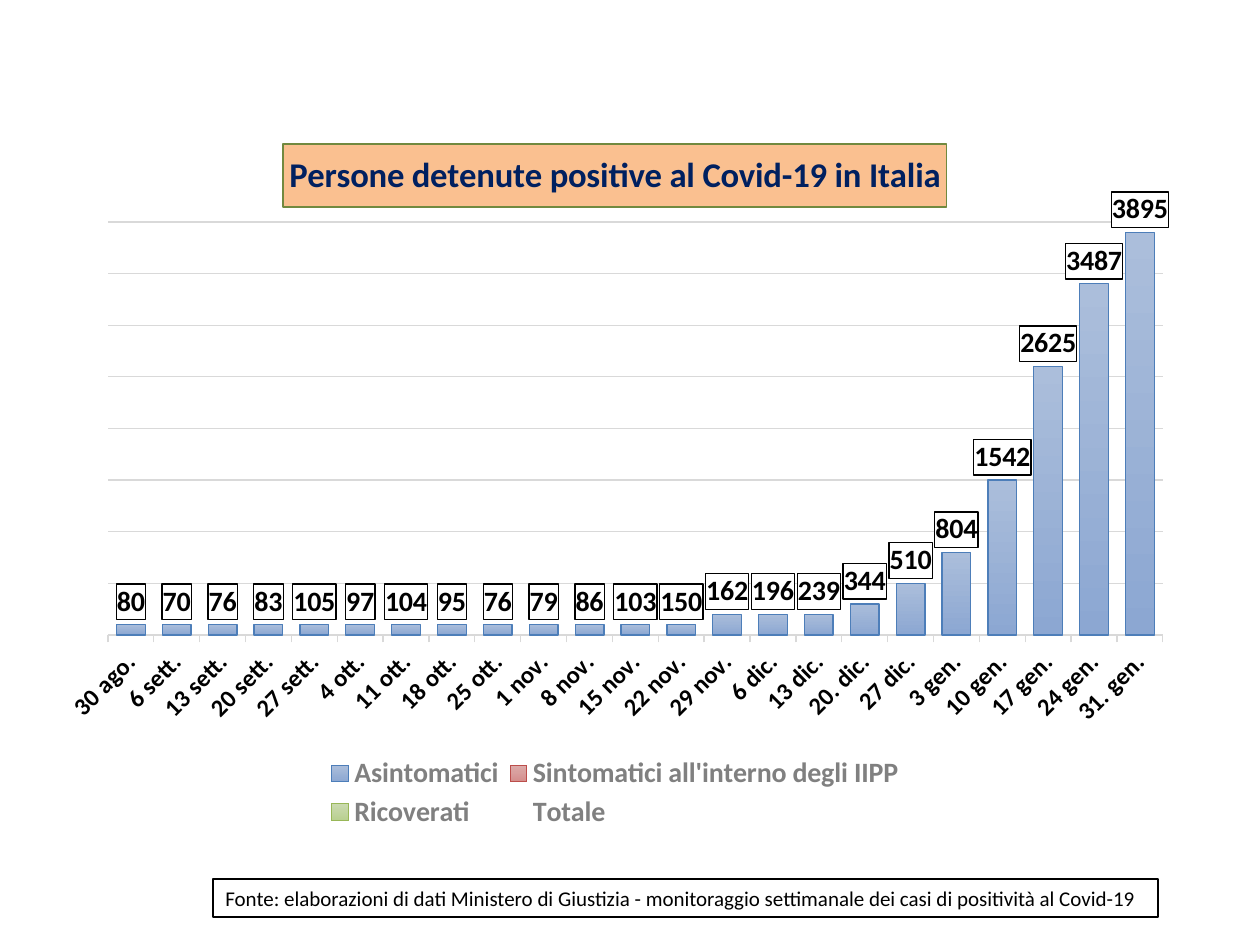
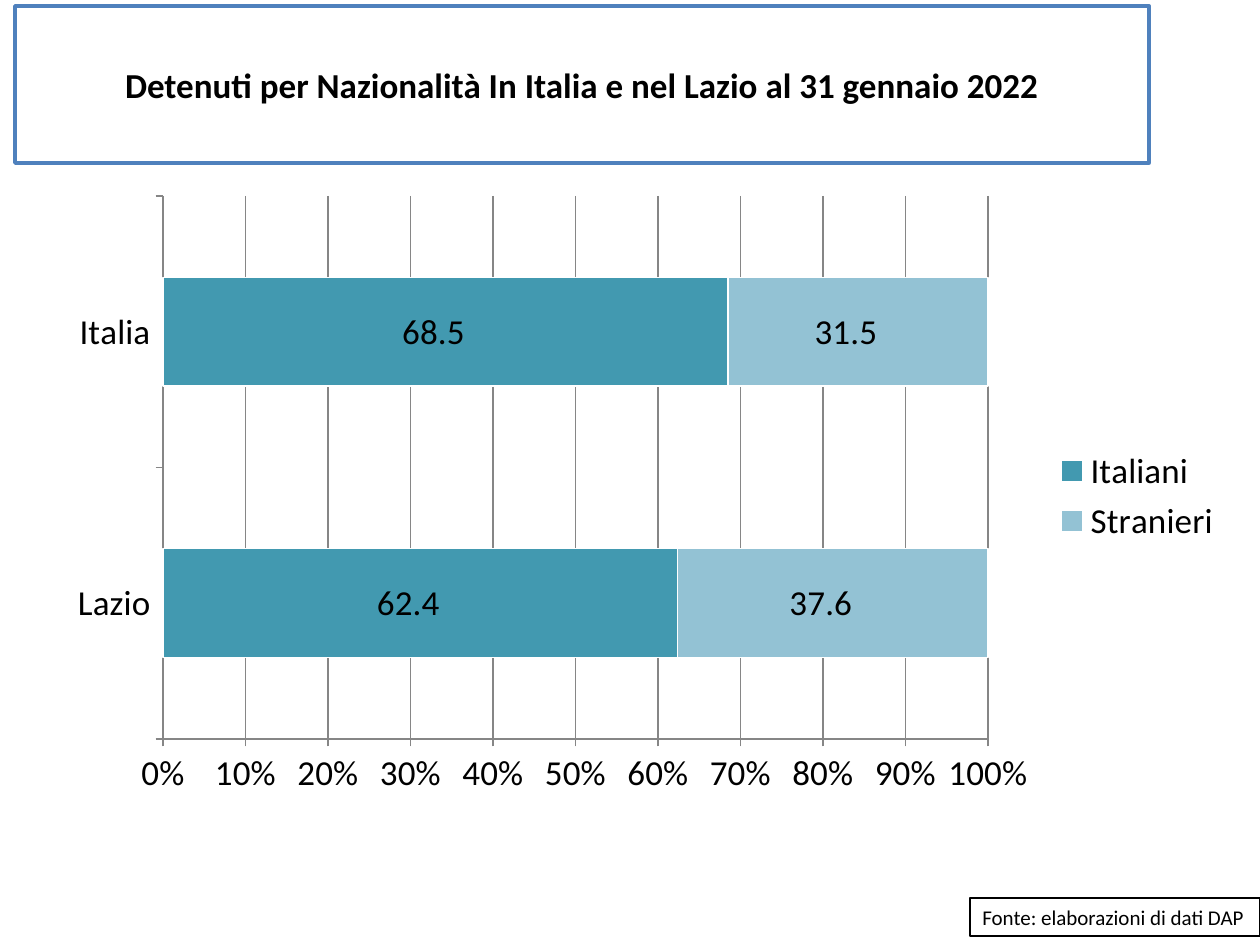
from dataclasses import dataclass
from lxml import etree
from pptx import Presentation
from pptx.chart.data import CategoryChartData
from pptx.dml.color import RGBColor
from pptx.enum.chart import XL_CHART_TYPE, XL_LABEL_POSITION, XL_LEGEND_POSITION, XL_TICK_LABEL_POSITION, XL_TICK_MARK
from pptx.enum.shapes import MSO_SHAPE
from pptx.enum.text import MSO_ANCHOR, PP_ALIGN
from pptx.oxml import parse_xml
from pptx.oxml.ns import nsdecls, qn
from pptx.util import Emu, Pt

COLUMN, BAR = XL_CHART_TYPE.COLUMN_STACKED, XL_CHART_TYPE.BAR_STACKED_100
BOTTOM, RIGHT = XL_LEGEND_POSITION.BOTTOM, XL_LEGEND_POSITION.RIGHT
INSIDE_BASE, CENTER_LABEL = XL_LABEL_POSITION.INSIDE_BASE, XL_LABEL_POSITION.CENTER
NO_LABELS, LOW = XL_TICK_LABEL_POSITION.NONE, XL_TICK_LABEL_POSITION.LOW
NO_TICK, TICK_OUT = XL_TICK_MARK.NONE, XL_TICK_MARK.OUTSIDE
RECT, MIDDLE = MSO_SHAPE.RECTANGLE, MSO_ANCHOR.MIDDLE
LEFT, CENTER = PP_ALIGN.LEFT, PP_ALIGN.CENTER
PX = 914400 / 126


@dataclass
class Theme:
    font: str = "Calibri"
    black: RGBColor = RGBColor(0, 0, 0)
    white: RGBColor = RGBColor(255, 255, 255)
    navy: RGBColor = RGBColor.from_string("002060")
    peach: RGBColor = RGBColor.from_string("FAC090")
    olive: RGBColor = RGBColor.from_string("71893F")
    blue: RGBColor = RGBColor.from_string("4F81BD")
    grey: RGBColor = RGBColor.from_string("808080")
    light_grid: RGBColor = RGBColor.from_string("D9D9D9")
    dark_grid: RGBColor = RGBColor.from_string("868686")
    gradients: tuple = (("ABBEDB", "8CA7D2", "4D7EB9"), ("DDACAB", "D48D8B", "BC4E4B"), ("CADAAF", "B9D091", "98B757"))
    teals: tuple = ("4299B0", "93C2D4")
    title: Pt = Pt(20)
    chart_title: Pt = Pt(19.8)
    label: Pt = Pt(16)
    axis: Pt = Pt(14)
    source: Pt = Pt(12)


def set_font(font, size, color, bold=False):
    font.name, font.size, font.bold = theme.font, size, bold
    font.color.rgb = color


def set_layout(el, frame, box, inner=False):
    for old in el.findall(qn("c:layout")):
        el.remove(old)
    layout = etree.Element(qn("c:layout"))
    manual = etree.SubElement(layout, qn("c:manualLayout"))
    fx, fy, fw, fh = frame
    values = [("xMode", "edge"), ("yMode", "edge"), ("x", round((box[0] - fx) / fw, 4)),
              ("y", round((box[1] - fy) / fh, 4))]
    if inner:
        values.insert(0, ("layoutTarget", "inner"))
    if len(box) == 4:
        values += [("w", round(box[2] / fw, 4)), ("h", round(box[3] / fh, 4))]
    for tag, value in values:
        etree.SubElement(manual, qn("c:" + tag)).set("val", str(value))
    overlay = el.find(qn("c:overlay"))
    if overlay is None:
        el.insert(0, layout)
    else:
        overlay.addprevious(layout)


theme = Theme()
prs = Presentation()
prs.slide_width, prs.slide_height = Emu(round(1260 * PX)), Emu(round(945 * PX))
covid = prs.slides.add_slide(prs.slide_layouts[6])
nationality = prs.slides.add_slide(prs.slide_layouts[5])

weeks = ["30 ago.", "6 sett.", "13 sett.", "20 sett.", "27 sett.", "4 ott.", "11 ott.", "18 ott.",
         "25 ott.", "1 nov.", "8 nov.", "15 nov.", "22 nov.", "29 nov.", "6 dic.", "13 dic.",
         "20. dic.", "27 dic.", "3 gen.", "10 gen.", "17 gen.", "24 gen.", "31. gen."]
totals = [80, 70, 76, 83, 105, 97, 104, 95, 76, 79, 86, 103, 150, 162, 196, 239, 344, 510,
          804, 1542, 2625, 3487, 3895]
asymptomatic = [100] * 13 + [200] * 3 + [300, 500, 800, 1500, 2600, 3400, 3900]
symptomatic = hospital = [0] * len(weeks)

charts = []
for slide, kind, frame, plot, cats, series, size, gap in (
    (covid, COLUMN, (44, 125, 1142, 711), (108, 222, 1055, 413), weeks,
     (("Asintomatici", asymptomatic), ("Sintomatici all'interno degli IIPP", symptomatic),
      ("Ricoverati", hospital), ("Totale", totals)), theme.label, 60),
    (nationality, BAR, (54, 185, 1181, 622), (163, 196, 825, 543), ["Lazio", "Italia"],
     (("Italiani", (62.4, 68.5)), ("Stranieri", (37.6, 31.5))), theme.title, 150),
):
    data = CategoryChartData()
    data.categories = cats
    for name, values in series:
        data.add_series(name, values)
    chart = slide.shapes.add_chart(kind, *[Emu(round(v * PX)) for v in frame], data).chart
    set_font(chart.font, size, theme.black, kind == COLUMN)
    chart.has_title = False
    chart.has_legend = True
    chart.legend.include_in_layout = False
    chart.plots[0].gap_width, chart.plots[0].overlap = gap, 100
    chart.plots[0].vary_by_categories = False
    set_layout(chart._chartSpace.chart.plotArea, frame, plot, True)
    grid = theme.light_grid if kind == COLUMN else theme.dark_grid
    chart.value_axis.has_major_gridlines = True
    for line in (chart.value_axis.major_gridlines.format.line, chart.category_axis.format.line,
                 chart.value_axis.format.line):
        line.color.rgb = grid
        line.width = Pt(0.75)
    chart.category_axis.major_tick_mark = TICK_OUT
    charts.append((chart, frame))

chart, frame = charts[0]
chart.has_title = True
title = chart.chart_title
title.text_frame.text = "Persone detenute positive al Covid-19 in Italia"
set_font(title.text_frame.paragraphs[0].runs[0].font, theme.chart_title, theme.navy, True)
title.format.fill.solid()
title.format.fill.fore_color.rgb = theme.peach
title.format.line.color.rgb = theme.olive
title.format.line.width = Pt(0.75)
set_layout(title._element, frame, (283, 144))
chart.legend.position = BOTTOM
set_font(chart.legend.font, theme.label, theme.grey, True)
set_layout(chart.legend._element, frame, (320, 752, 590, 82))
axis = chart.value_axis
axis.minimum_scale, axis.maximum_scale, axis.major_unit = 0, 4000, 500
axis.major_tick_mark, axis.tick_label_position = NO_TICK, NO_LABELS
axis.format.line.fill.background()
axis = chart.category_axis
axis.tick_label_position = LOW
set_font(axis.tick_labels.font, theme.axis, theme.black, True)
axis._element.find(qn("c:txPr")).find(qn("a:bodyPr")).set("rot", "-2700000")
*parts, total = chart.plots[0].series
for s, (top, bottom, edge) in zip(parts, theme.gradients):
    fill = s.format.fill
    fill.gradient()
    fill.gradient_angle = 270
    for stop, color, position in zip(fill.gradient_stops, (top, bottom), (0, 1)):
        stop.color.rgb = RGBColor.from_string(color)
        stop.position = position
    s.format.line.color.rgb = RGBColor.from_string(edge)
    s.format.line.width = Pt(0.75)
total.format.fill.background()
total.format.line.fill.background()
labels = total.data_labels
labels.show_value, labels.position = True, INSIDE_BASE
set_font(labels.font, theme.label, theme.black, True)
labels._element.find(qn("c:txPr")).addprevious(parse_xml(
    f'<c:spPr {nsdecls("c", "a")}><a:solidFill><a:srgbClr val="{theme.white}"/></a:solidFill>'
    f'<a:ln w="9525"><a:solidFill><a:srgbClr val="{theme.black}"/></a:solidFill></a:ln></c:spPr>'))

chart, frame = charts[1]
chart.legend.position = RIGHT
axis = chart.value_axis
axis.major_tick_mark = TICK_OUT
axis.tick_labels.number_format, axis.tick_labels.number_format_is_linked = "0%", False
for s, color in zip(chart.plots[0].series, theme.teals):
    s.format.fill.solid()
    s.format.fill.fore_color.rgb = RGBColor.from_string(color)
    s.format.line.color.rgb = theme.white
    s.format.line.width = Pt(0.75)
    labels = s.data_labels
    labels.show_value, labels.position = True, CENTER_LABEL
    labels.number_format = r'_-* #,##0.0\ _€_-;\-* #,##0.0\ _€_-;_-* "-"??\ _€_-;_-@_-'
    labels.number_format_is_linked = False
    set_font(labels.font, theme.title, theme.black)

sp = nationality.shapes.title
sp.left, sp.top, sp.width, sp.height = [Emu(round(v * PX)) for v in (15, 6, 1134, 157)]
sp.fill.solid()
sp.fill.fore_color.rgb = theme.white
sp.line.color.rgb = theme.blue
sp.line.width = Pt(2)
tf = sp.text_frame
tf.text = "Detenuti per Nazionalità In Italia e nel Lazio al 31 gennaio 2022"
tf.vertical_anchor = MIDDLE
p = tf.paragraphs[0]
p.alignment = CENTER
set_font(p.runs[0].font, theme.title, theme.black, True)

for slide, box, text in (
    (covid, (213, 879, 945, 38),
     "Fonte: elaborazioni di dati Ministero di Giustizia - monitoraggio settimanale dei casi di positività al Covid-19"),
    (nationality, (970, 898, 290, 38), "Fonte: elaborazioni di dati DAP"),
):
    sp = slide.shapes.add_shape(RECT, *[Emu(round(v * PX)) for v in box])
    sp.shadow.inherit = False
    sp.fill.solid()
    sp.fill.fore_color.rgb = theme.white
    sp.line.color.rgb = theme.black
    sp.line.width = Pt(0.75)
    tf = sp.text_frame
    tf.text = text
    tf.word_wrap = False
    tf.vertical_anchor = MIDDLE
    p = tf.paragraphs[0]
    p.alignment = LEFT
    set_font(p.runs[0].font, theme.source, theme.black)

prs.save("out.pptx")
